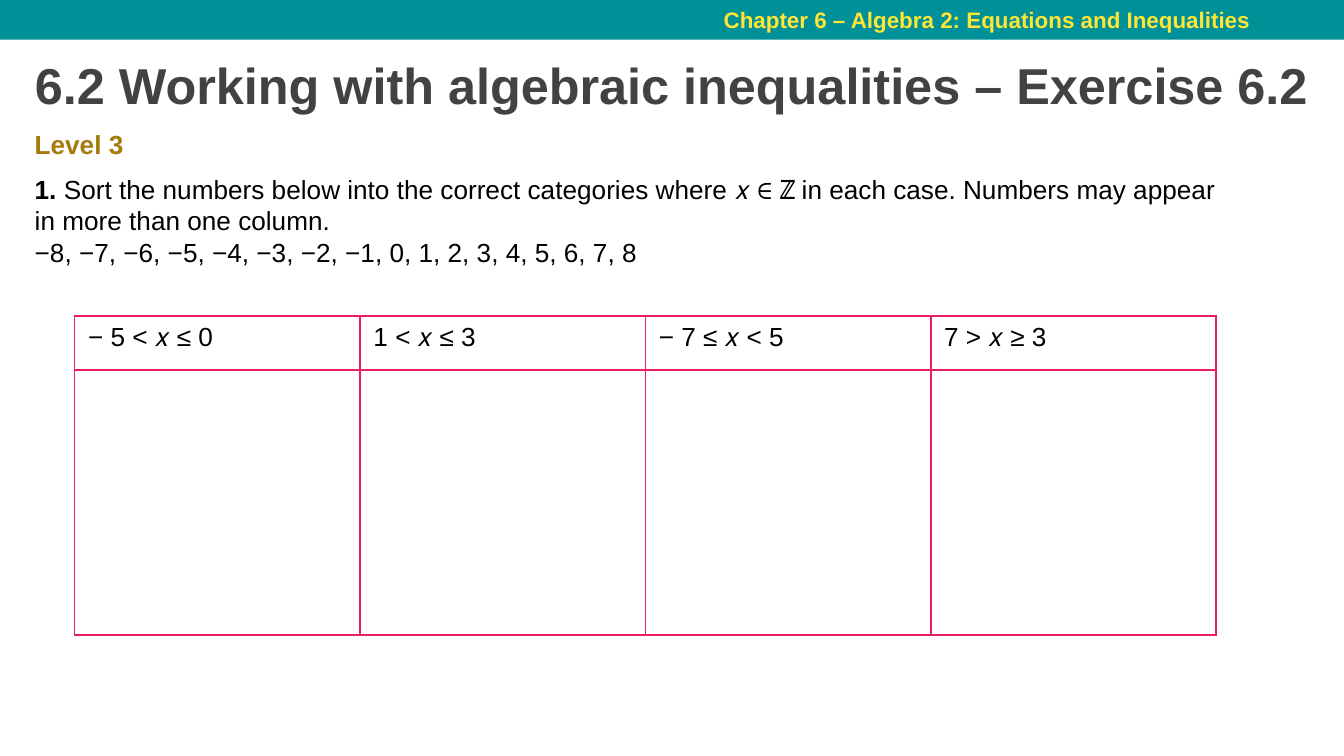
import pptx
import pptx.util
import pptx.dml.color
import pptx.enum.shapes
import pptx.enum.text
import pptx.oxml.ns
from lxml import etree

Pt = pptx.util.Pt
ALIGN = pptx.enum.text.PP_ALIGN
ANCHOR = pptx.enum.text.MSO_ANCHOR

# Content
CHAPTER = "Chapter 6 – Algebra 2: Equations and Inequalities"
TITLE = "6.2 Working with algebraic inequalities – Exercise 6.2"
LEVEL = "Level 3"
QUESTION = [
    [("1. ", True),
     ("Sort the numbers below into the correct categories where 𝑥 ∈ ℤ in each case. Numbers may appear", False)],
    [("in more than one column.", False)],
    [("−8, −7, −6, −5, −4, −3, −2, −1, 0, 1, 2, 3, 4, 5, 6, 7, 8", False)],
]
CATEGORIES = ["− 5 < 𝑥 ≤ 0", "1 < 𝑥 ≤ 3", "− 7 ≤ 𝑥 < 5", "7 > 𝑥 ≥ 3"]

# Look
TEAL, YELLOW, GREY, GOLD = "009198", "FFE535", "424242", "A47B0C"
BLACK, WHITE, PINK = "000000", "FFFFFF", "E91D63"
PAGE_WIDTH, PAGE_HEIGHT = 720, 405
TEXT_LEFT = 11.5
TABLE_LEFT, TABLE_TOP, TABLE_WIDTH = 40, 169.2, 611.6
ROW_HEIGHTS = [29, 142]


def colour(value):
    return pptx.dml.color.RGBColor.from_string(value)


def format_span(span, size, value, bold=False):
    span.font.name = "Arial"
    span.font.size = Pt(size)
    span.font.bold = bold
    span.font.color.rgb = colour(value)


def fill_box(box, paragraphs, size, value, align=ALIGN.LEFT, anchor=ANCHOR.TOP, inset=3.6):
    frame = box.text_frame
    frame.word_wrap = True
    frame.auto_size = pptx.enum.text.MSO_AUTO_SIZE.NONE
    frame.vertical_anchor = anchor
    frame.margin_left = frame.margin_right = Pt(7.2)
    frame.margin_top = frame.margin_bottom = Pt(inset)
    for index, spans in enumerate(paragraphs):
        para = frame.paragraphs[0] if index == 0 else frame.add_paragraph()
        para.alignment = align
        for text, bold in spans:
            span = para.add_run()
            span.text = text
            format_span(span, size, value, bold)


def add_text(page, place, *args, **options):
    box = page.shapes.add_textbox(*map(Pt, place))
    fill_box(box, *args, **options)


def set_border(cell, side, value, width):
    properties = cell._tc.get_or_add_tcPr()
    line = etree.SubElement(properties, pptx.oxml.ns.qn(f"a:ln{side}"), w=str(Pt(width)))
    fill = etree.SubElement(line, pptx.oxml.ns.qn("a:solidFill"))
    etree.SubElement(fill, pptx.oxml.ns.qn("a:srgbClr"), val=value)


deck = pptx.Presentation()
deck.slide_width, deck.slide_height = Pt(PAGE_WIDTH), Pt(PAGE_HEIGHT)
page = deck.slides.add_slide(deck.slide_layouts[5])

# Chapter band
band = page.shapes.add_shape(pptx.enum.shapes.MSO_SHAPE.RECTANGLE, 0, 0, Pt(PAGE_WIDTH), Pt(21.3))
band.shadow.inherit = False
band.fill.solid()
band.fill.fore_color.rgb = colour(TEAL)
band.line.fill.background()
add_text(page, (347, -0.6, 363.6, 22.3), [[(CHAPTER, True)]], 12, YELLOW,
         align=ALIGN.CENTER, anchor=ANCHOR.MIDDLE, inset=0)

# Title
title = page.shapes.title
title.left, title.top, title.width, title.height = map(Pt, (TEXT_LEFT, 21.6, 699.2, 51))
fill_box(title, [[(TITLE, True)]], 27, GREY, inset=7.2)

# Level and question
add_text(page, (TEXT_LEFT, 65, 144, 24.2), [[(LEVEL, True)]], 14, GOLD)
add_text(page, (TEXT_LEFT, 89.3, 658, 126), QUESTION, 14, BLACK)

# Sorting table
table = page.shapes.add_table(
    len(ROW_HEIGHTS), len(CATEGORIES), Pt(TABLE_LEFT), Pt(TABLE_TOP),
    Pt(TABLE_WIDTH), Pt(sum(ROW_HEIGHTS))).table
table.first_row = table.horz_banding = False
for column in table.columns:
    column.width = Pt(TABLE_WIDTH / len(CATEGORIES))
for row, height in zip(table.rows, ROW_HEIGHTS):
    row.height = Pt(height)
    for cell in row.cells:
        for side in "LRTB":
            set_border(cell, side, PINK, 1)
        cell.fill.solid()
        cell.fill.fore_color.rgb = colour(WHITE)
for cell, text in zip(table.rows[0].cells, CATEGORIES):
    cell.text_frame.text = text
    format_span(cell.text_frame.paragraphs[0].runs[0], 14, BLACK)

deck.save("out.pptx")
